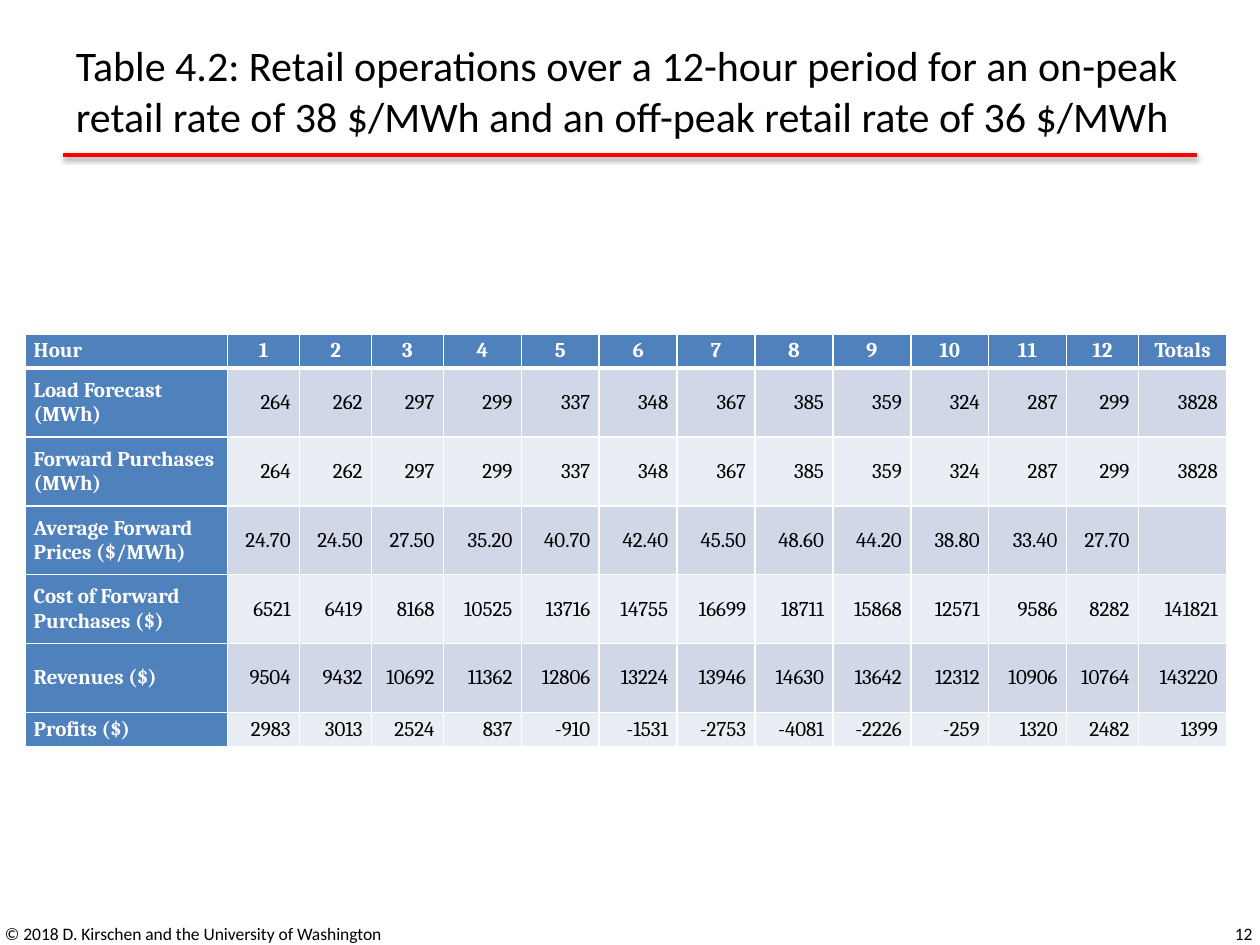
from dataclasses import dataclass

from lxml import etree
from pptx import Presentation
from pptx.dml.color import RGBColor as RGB
from pptx.enum.shapes import MSO_CONNECTOR as Connector
from pptx.enum.text import MSO_ANCHOR as Anchor, PP_ALIGN as Align
from pptx.oxml import parse_xml
from pptx.oxml.ns import nsdecls, qn
from pptx.util import Cm, Pt


@dataclass(frozen=True)
class Theme:
    text: str = "000000"
    rule: str = "FF0000"
    head: str = "4F81BD"
    head_text: str = "FFFFFF"
    border: str = "FFFFFF"
    bands: tuple = ("D0D8E8", "E9EDF4")
    font: str = "Calibri"
    table_font: str = "Cambria"
    title_size: int = 24
    table_size: int = 12
    footer_size: int = 10


THEME = Theme()

TITLE = ("Table 4.2: Retail operations over a 12-hour period for an on-peak "
         "retail rate of 38 $/MWh and an off-peak retail rate of 36 $/MWh")
CREDIT = "© 2018 D. Kirschen and the University of Washington"
PAGE_NUMBER = "12"

LOADS = "264 262 297 299 337 348 367 385 359 324 287 299 3828"
OPERATIONS = [
    ("Hour", "1 2 3 4 5 6 7 8 9 10 11 12 Totals"),
    ("Load Forecast (MWh)", LOADS),
    ("Forward Purchases (MWh)", LOADS),
    ("Average Forward Prices ($/MWh)",
     "24.70 24.50 27.50 35.20 40.70 42.40 45.50 48.60 44.20 38.80 33.40 27.70"),
    ("Cost of Forward Purchases ($)",
     "6521 6419 8168 10525 13716 14755 16699 18711 15868 12571 9586 8282 141821"),
    ("Revenues ($)",
     "9504 9432 10692 11362 12806 13224 13946 14630 13642 12312 10906 10764 143220"),
    ("Profits ($)",
     "2983 3013 2524 837 -910 -1531 -2753 -4081 -2226 -259 1320 2482 1399"),
]
COL_WIDTHS = [4.09] + [1.45] * 3 + [1.57] * 8 + [1.45, 1.78]
ROW_HEIGHTS = [0.69] + [1.39] * 5 + [0.69]


def style_paragraph(p, font, size, color, align=Align.LEFT, bold=False):
    p.alignment = align
    p.font.name = font
    p.font.size = Pt(size)
    p.font.bold = bold
    p.font.color.rgb = RGB.from_string(color)


def add_text(s, text, left, top, width, height, size, align=Align.LEFT):
    tf = s.shapes.add_textbox(Cm(left), Cm(top), Cm(width), Cm(height)).text_frame
    tf.word_wrap = True
    tf.vertical_anchor = Anchor.MIDDLE
    p = tf.paragraphs[0]
    p.text = text
    style_paragraph(p, THEME.font, size, THEME.text, align)


def add_shadow(line):
    line._element.spPr.append(parse_xml(
        f'<a:effectLst {nsdecls("a")}>'
        f'<a:outerShdw blurRad="{Pt(3.1)}" dist="{Pt(1.6)}" dir="5400000" rotWithShape="0">'
        '<a:srgbClr val="000000"><a:alpha val="38000"/></a:srgbClr>'
        '</a:outerShdw></a:effectLst>'))


def add_header(s, left, top, width, height):
    """Title with a red shadowed rule near its lower edge."""
    y = Cm(top + height - 0.18)
    rule = s.shapes.add_connector(Connector.STRAIGHT, Cm(left), y, Cm(left + width), y)
    rule.line.color.rgb = RGB.from_string(THEME.rule)
    rule.line.width = Pt(2)
    add_shadow(rule)
    add_text(s, TITLE, left, top, width, height, THEME.title_size)


def set_borders(cell, top, bottom):
    """Draw all four edges; top and bottom are widths in points."""
    tc_pr = cell._tc.get_or_add_tcPr()
    for side, width in (("L", 1), ("R", 1), ("T", top), ("B", bottom)):
        ln = etree.SubElement(tc_pr, qn(f"a:ln{side}"), w=str(Pt(width)))
        fill = etree.SubElement(ln, qn("a:solidFill"))
        etree.SubElement(fill, qn("a:srgbClr"), val=THEME.border)


def fill_cell(cell, text, row, col):
    is_head = row == 0 or col == 0
    set_borders(cell, top=3 if row == 1 else 1, bottom=3 if row == 0 else 1)
    cell.fill.solid()
    cell.fill.fore_color.rgb = RGB.from_string(
        THEME.head if is_head else THEME.bands[(row - 1) % 2])
    cell.vertical_anchor = Anchor.MIDDLE
    cell.margin_left = cell.margin_right = Cm(0.18)
    cell.margin_top = cell.margin_bottom = 0
    p = cell.text_frame.paragraphs[0]
    if text:
        p.text = text
    align = Align.LEFT if col == 0 else Align.CENTER if row == 0 else Align.RIGHT
    style_paragraph(p, THEME.table_font, THEME.table_size,
                    THEME.head_text if is_head else THEME.text, align, is_head)


def add_operations_table(s, left, top):
    n_rows, n_cols = len(ROW_HEIGHTS), len(COL_WIDTHS)
    table = s.shapes.add_table(n_rows, n_cols, Cm(left), Cm(top),
                               Cm(sum(COL_WIDTHS)), Cm(sum(ROW_HEIGHTS))).table
    for column, width in zip(table.columns, COL_WIDTHS):
        column.width = Cm(width)
    for row, height in zip(table.rows, ROW_HEIGHTS):
        row.height = Cm(height)
    for i, (label, values) in enumerate(OPERATIONS):
        texts = [label, *values.split()]
        texts += [""] * (n_cols - len(texts))
        for j, text in enumerate(texts):
            fill_cell(table.cell(i, j), text, i, j)


def add_footer(s, left, top, width, height):
    number_width = 5.92
    add_text(s, CREDIT, left, top, 9.86, height, THEME.footer_size)
    add_text(s, PAGE_NUMBER, left + width - number_width, top, number_width, height,
             THEME.footer_size, Align.RIGHT)


def main():
    prs = Presentation()
    prs.slide_width, prs.slide_height = Cm(25.4), Cm(19.05)
    s = prs.slides.add_slide(prs.slide_layouts[6])
    add_header(s, 1.28, 0.33, 22.84, 2.97)
    add_operations_table(s, 0.5, 6.73)
    add_footer(s, -0.15, 18.31, 25.65, 1.02)
    prs.save("out.pptx")


if __name__ == "__main__":
    main()
